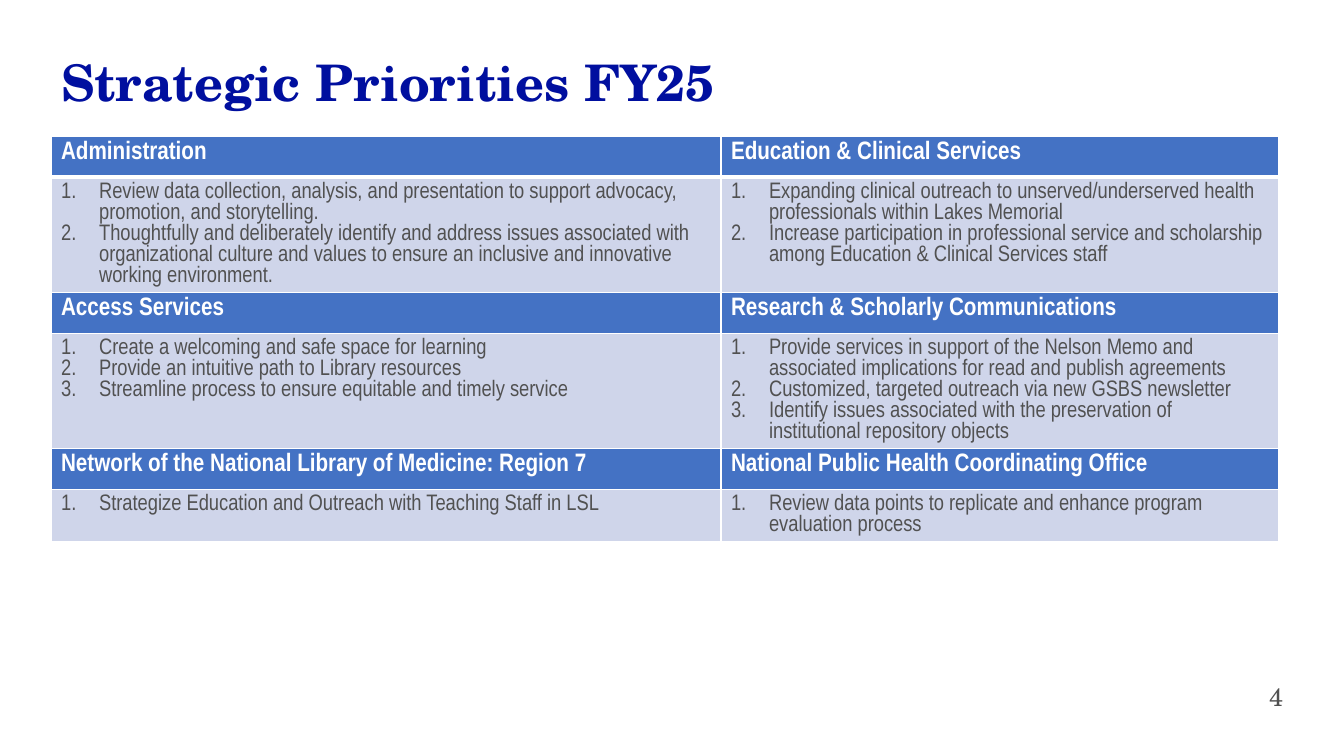
from pptx import Presentation
from pptx import util as u
from pptx.dml.color import RGBColor
from pptx.enum import text
from pptx.oxml.ns import qn
from lxml import etree

PX = 914400 / 100.8  # EMU in one px

NAVY = RGBColor(0x00, 0x0F, 0x9F)
BLUE = RGBColor(0x44, 0x72, 0xC4)
PALE = RGBColor(0xCF, 0xD5, 0xEA)
GREY = RGBColor(0x51, 0x51, 0x51)
WHITE = RGBColor(0xFF, 0xFF, 0xFF)

SERIF = "TeX Gyre Schola"
NARROW = "Arial Narrow"

COLUMN_WIDTHS = [670, 558]
HEADING_HEIGHT = 41

# Each band: height of its list row, then (department, priorities) per column
BANDS = [
    (115, [
        ("Administration", [
            "Review data collection, analysis, and presentation to support advocacy, promotion, and storytelling.",
            "Thoughtfully and deliberately identify and address issues associated with organizational culture "
            "and values to ensure an inclusive and innovative working environment.",
        ]),
        ("Education & Clinical Services", [
            "Expanding clinical outreach to unserved/underserved health professionals within Lakes Memorial",
            "Increase participation in professional service and scholarship among Education & Clinical "
            "Services staff",
        ]),
    ]),
    (115, [
        ("Access Services", [
            "Create a welcoming and safe space for learning",
            "Provide an intuitive path to Library resources",
            "Streamline process to ensure equitable and timely service",
        ]),
        ("Research & Scholarly Communications", [
            "Provide services in support of the Nelson Memo and associated implications for read and "
            "publish agreements",
            "Customized, targeted outreach via new GSBS newsletter",
            "Identify issues associated with the preservation of institutional repository objects",
        ]),
    ]),
    (52, [
        ("Network of the National Library of Medicine: Region 7", [
            "Strategize Education and Outreach with Teaching Staff in LSL",
        ]),
        ("National Public Health Coordinating Office", [
            "Review data points to replicate and enhance program evaluation process",
        ]),
    ]),
]


def px(length):
    return u.Emu(round(length * PX))


def place(shape, left, top, width, height):
    shape.left, shape.top = px(left), px(top)
    shape.width, shape.height = px(width), px(height)


def number_paragraph(para, indent=38):
    """Turn a paragraph into an item of a numbered list."""
    props = para._p.get_or_add_pPr()
    props.set("marL", str(px(indent)))
    props.set("indent", str(-px(indent)))
    etree.SubElement(props, qn("a:buFont"), typeface="+mj-lt")
    etree.SubElement(props, qn("a:buAutoNum"), type="arabicPeriod")


def write(frame, lines, *, size, color, font=NARROW, bold=False, numbered=False,
          align=text.PP_ALIGN.LEFT, spacing=None):
    """Fill a text frame with one paragraph per line."""
    frame.word_wrap = True
    for index, line in enumerate(lines):
        para = frame.paragraphs[0] if index == 0 else frame.add_paragraph()
        para.alignment = align
        if spacing:
            para.line_spacing = spacing
        if numbered:
            number_paragraph(para)
        span = para.add_run()
        span.text = line
        span.font.name = font
        span.font.size = u.Pt(size)
        span.font.bold = bold
        span.font.color.rgb = color


def add_borders(cell, top=1, bottom=1):
    """Draw white cell borders, widths in points; call before the fill."""
    props = cell._tc.get_or_add_tcPr()
    for side, width in (("L", 1), ("R", 1), ("T", top), ("B", bottom)):
        line = etree.SubElement(props, qn(f"a:ln{side}"), w=str(u.Pt(width)))
        fill = etree.SubElement(line, qn("a:solidFill"))
        etree.SubElement(fill, qn("a:srgbClr"), val=str(WHITE))


def fill_cell(cell, lines, background, *, top=1, bottom=1, **style):
    add_borders(cell, top, bottom)
    cell.fill.solid()
    cell.fill.fore_color.rgb = background
    write(cell.text_frame, lines, **style)


def add_priorities(slide):
    heights = [h for list_height, _ in BANDS for h in (HEADING_HEIGHT, list_height)]
    frame = slide.shapes.add_table(len(heights), len(COLUMN_WIDTHS), px(51), px(136),
                                   px(sum(COLUMN_WIDTHS)), px(sum(heights)))
    table = frame.table
    table.horz_banding = False
    for column, width in zip(table.columns, COLUMN_WIDTHS):
        column.width = px(width)
    for row, height in zip(table.rows, heights):
        row.height = px(height)

    for band, (_, departments) in enumerate(BANDS):
        divider = 3 if band == 0 else 1
        for col, (department, priorities) in enumerate(departments):
            fill_cell(table.cell(2 * band, col), [department], BLUE, bottom=divider,
                      size=18, color=WHITE, bold=True)
            fill_cell(table.cell(2 * band + 1, col), priorities, PALE, top=divider,
                      size=16, color=GREY, numbered=True)


def add_title(slide):
    title = slide.shapes.title
    place(title, 51, 53, 1227, 91)
    title.text_frame.vertical_anchor = text.MSO_ANCHOR.TOP
    write(title.text_frame, ["Strategic Priorities FY25"], size=36, color=NAVY,
          font=SERIF, bold=True, spacing=0.9)


def add_page_number(slide):
    box = slide.shapes.add_textbox(px(991), px(676), px(302), px(40))
    box.text_frame.vertical_anchor = text.MSO_ANCHOR.MIDDLE
    write(box.text_frame, ["4"], size=18, color=GREY, font=SERIF,
          align=text.PP_ALIGN.RIGHT)


def main():
    deck = Presentation()
    deck.slide_width, deck.slide_height = px(1344), px(756)
    page = deck.slides.add_slide(deck.slide_layouts[5])  # title only
    add_title(page)
    add_priorities(page)
    add_page_number(page)
    deck.save("out.pptx")


if __name__ == "__main__":
    main()
